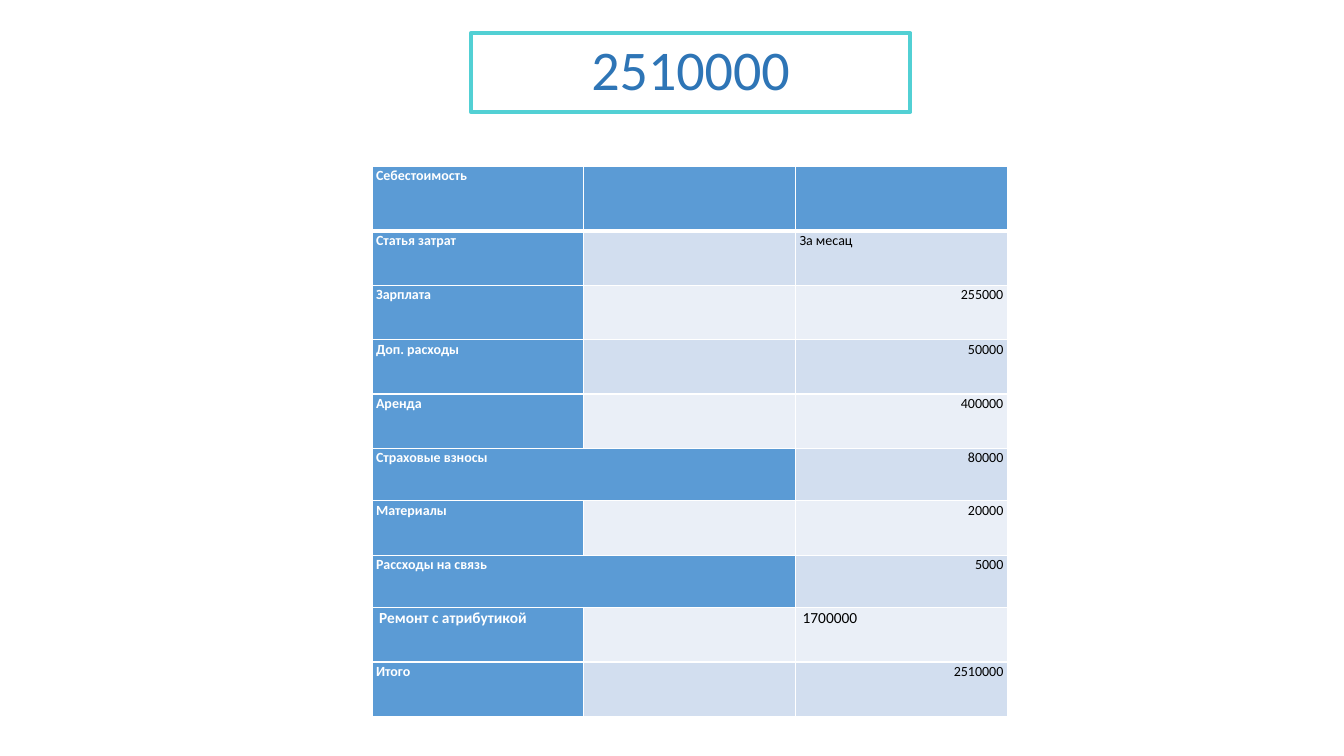
import pptx
import pptx.dml.color
import pptx.enum.shapes
import pptx.enum.text
import pptx.oxml
import pptx.oxml.ns
import pptx.util

Inches = pptx.util.Inches
Pt = pptx.util.Pt
ALIGN = pptx.enum.text.PP_ALIGN

COLOURS = {
    "white": "FFFFFF",
    "black": "000000",
    "total": "2E75B6",
    "frame": "52D0D4",
    "label": "5B9BD5",
    "dark band": "D2DEEF",
    "light band": "EAEFF7",
}

# Label, monthly amount, whether the label spans two columns
COSTS = [
    ("Себестоимость", "", False),
    ("Статья затрат", "За месац", False),
    ("Зарплата", "255000", False),
    ("Доп. расходы", "50000", False),
    ("Аренда", "400000", False),
    ("Страховые взносы", "80000", True),
    ("Материалы", "20000", False),
    ("Рассходы на связь", "5000", True),
    ("Ремонт с атрибутикой", "1700000", False),
    ("Итого", "2510000", False),
]
HEADER, SUBHEADER, REPAIR = 0, 1, 8


def colour(name):
    return pptx.dml.color.RGBColor.from_string(COLOURS[name])


def set_values(target, values):
    for name, value in values.items():
        setattr(target, name, value)


def write(paragraph, text, ink, size, **values):
    set_values(paragraph, values)
    run = paragraph.add_run()
    run.text = text
    set_values(run.font, {"name": "Calibri", "size": Pt(size)})
    run.font.color.rgb = colour(ink)
    return run


def add_total(slide, text):
    box = slide.shapes.add_shape(
        pptx.enum.shapes.MSO_SHAPE.RECTANGLE,
        Inches(4.67), Inches(0.33), Inches(4.36), Inches(0.78))
    box.shadow.inherit = False
    box.fill.solid()
    box.fill.fore_color.rgb = colour("white")
    box.line.color.rgb = colour("frame")
    box.line.width = Pt(3)
    set_values(box.text_frame, {
        "word_wrap": True,
        "vertical_anchor": pptx.enum.text.MSO_ANCHOR.MIDDLE,
    })
    write(box.text_frame.paragraphs[0], text, "total", 40,
          alignment=ALIGN.CENTER, line_spacing=0.9)


def set_borders(cell, widths):
    properties = cell._tc.get_or_add_tcPr()
    for side, width in widths.items():
        properties.append(pptx.oxml.parse_xml(
            f'<a:ln{side} {pptx.oxml.ns.nsdecls("a")} w="{Pt(width)}">'
            f'<a:solidFill><a:srgbClr val="{COLOURS["white"]}"/></a:solidFill>'
            f'</a:ln{side}>'))


def style_cell(cell, row, column, spans):
    set_borders(cell, {
        "L": 1, "R": 1,
        "T": 3 if row == SUBHEADER else 1,
        "B": 3 if row == HEADER else 1,
    })
    is_label = row == HEADER or column == 0 or (spans and column == 1)
    band = "dark band" if row % 2 else "light band"
    cell.fill.solid()
    cell.fill.fore_color.rgb = colour("label" if is_label else band)


def fill_cell(cell, text, ink, row, alignment, bold):
    set_values(cell, {
        # The repair row is set slightly in
        "margin_left": Inches(0.07 if row == REPAIR else 0.04),
        "margin_right": Inches(0.04),
        "margin_top": 0,
        "margin_bottom": 0,
    })
    run = write(cell.text_frame.paragraphs[0], text, ink,
                11 if row == REPAIR else 10,
                alignment=alignment, line_spacing=1.07)
    run.font.bold = bold


def add_costs(slide):
    costs = slide.shapes.add_table(
        len(COSTS), 3, Inches(3.69), Inches(1.65),
        Inches(6.3), Inches(5.46)).table
    set_values(costs, {"first_row": False, "horz_banding": False})
    for column in costs.columns:
        column.width = Inches(2.1)

    for row, (label, amount, spans) in enumerate(COSTS):
        height = 0.64 if row == HEADER else 0.52 if spans else 0.54
        costs.rows[row].height = Inches(height)
        for column in range(3):
            style_cell(costs.cell(row, column), row, column, spans)
        if spans:
            costs.cell(row, 0).merge(costs.cell(row, 1))

        fill_cell(costs.cell(row, 0), label, "white", row,
                  ALIGN.JUSTIFY if row == HEADER else ALIGN.LEFT, True)
        if amount:
            is_left = row in (SUBHEADER, REPAIR)
            fill_cell(costs.cell(row, 2), amount, "black", row,
                      ALIGN.LEFT if is_left else ALIGN.RIGHT, False)


def main():
    deck = pptx.Presentation()
    set_values(deck, {"slide_width": Inches(13.33),
                      "slide_height": Inches(7.5)})
    slide = deck.slides.add_slide(deck.slide_layouts[6])
    # Total above the cost breakdown
    add_total(slide, "2510000")
    add_costs(slide)
    deck.save("out.pptx")


if __name__ == "__main__":
    main()
